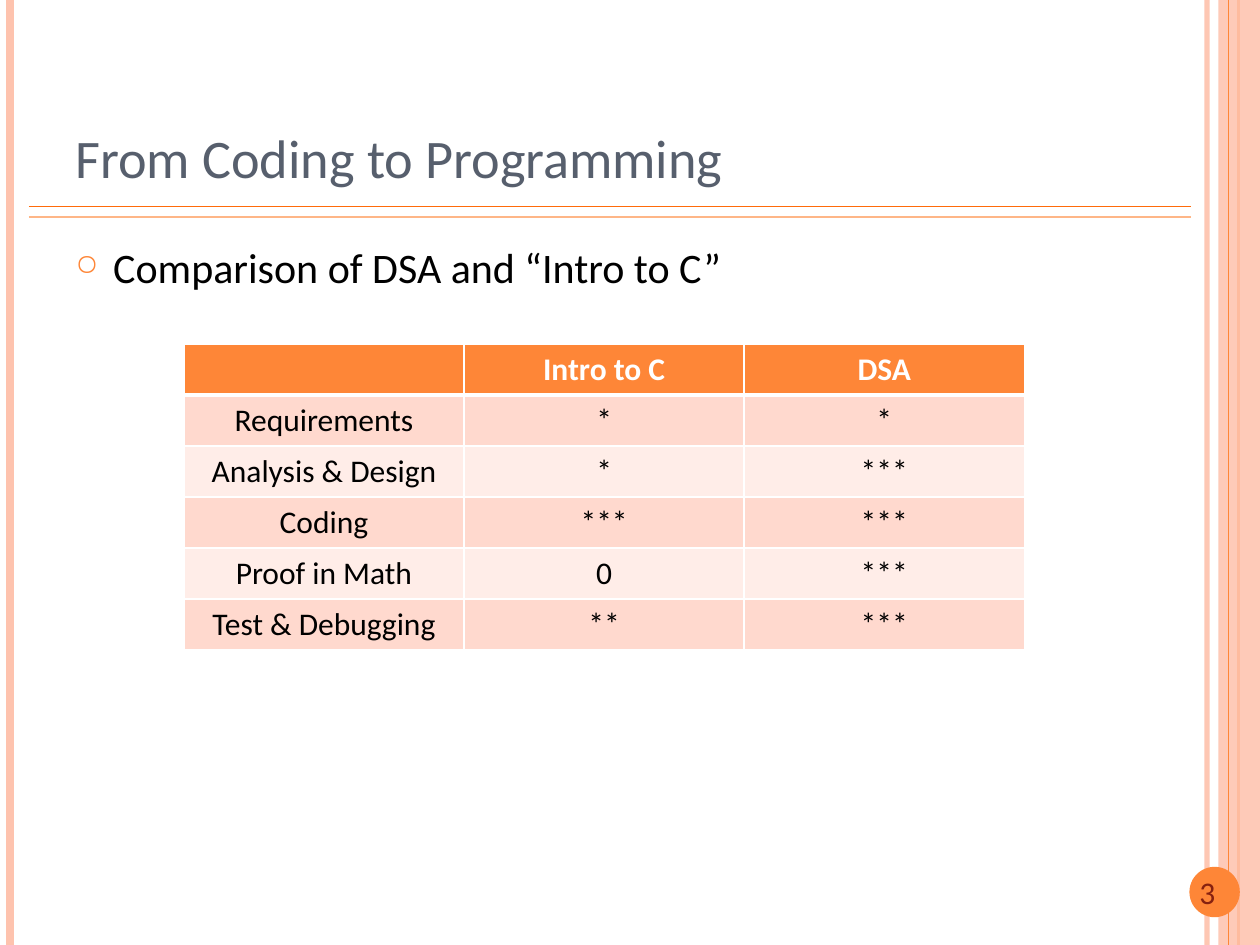
import pptx
import pptx.dml.color
import pptx.enum.shapes
import pptx.enum.text
import pptx.oxml
import pptx.oxml.ns
import pptx.util
from lxml import etree

PX = 9144  # EMU per px, 100 px to the inch
FONT = "Calibri"
COLORS = {
    "orange": "FE8637", "peach": "FEC3AE", "rule": "FF6B0A", "light rule": "FEB687",
    "title": "575F6D", "number": "862110", "text": "000000", "white": "FFFFFF",
    "odd row": "FFD9CE", "even row": "FFEDE8",
}
ROWS = [
    ["", "Intro to C", "DSA"],
    ["Requirements", "*", "*"],
    ["Analysis & Design", "*", "***"],
    ["Coding", "***", "***"],
    ["Proof in Math", "0", "***"],
    ["Test & Debugging", "**", "***"],
]
ANCHOR = pptx.enum.text.MSO_ANCHOR


def rgb(name):
    return pptx.dml.color.RGBColor.from_string(COLORS[name])


def add_element(parent, tag, **attributes):
    return etree.SubElement(parent, pptx.oxml.ns.qn(tag), attributes)


def set_opacity(element, percent):
    color = next(element.iter(pptx.oxml.ns.qn("a:srgbClr")))
    add_element(color, "a:alpha", val=str(percent * 1000))


class SlideBuilder:
    def __init__(self, slide):
        self.slide = slide

    def line(self, start, end, color, width, opacity=100):
        connector = self.slide.shapes.add_connector(
            pptx.enum.shapes.MSO_CONNECTOR.STRAIGHT,
            *(value * PX for value in (*start, *end)))
        connector.line.color.rgb = rgb(color)
        connector.line.width = pptx.util.Pt(width)
        properties = connector._element.spPr
        if opacity < 100:
            set_opacity(properties, opacity)
        add_element(properties, "a:effectLst")

    def shape(self, kind, box, color, opacity=100):
        shape = self.slide.shapes.add_shape(kind, *(value * PX for value in box))
        shape.shadow.inherit = False
        shape.fill.solid()
        shape.fill.fore_color.rgb = rgb(color)
        shape.line.fill.background()
        if opacity < 100:
            set_opacity(shape._element.spPr, opacity)

    def run(self, paragraph, text, size, color, bold=False):
        run = paragraph.add_run()
        run.text = text
        run.font.name = FONT
        run.font.size = pptx.util.Pt(size)
        run.font.bold = bold
        run.font.color.rgb = rgb(color)

    def text(self, box, text, size, color, anchor=ANCHOR.TOP):
        frame = self.slide.shapes.add_textbox(*(value * PX for value in box)).text_frame
        frame.word_wrap = True
        frame.vertical_anchor = anchor
        paragraph = frame.paragraphs[0]
        self.run(paragraph, text, size, color)
        return paragraph

    def bullet(self, paragraph, character, color, percent, indent):
        properties = paragraph._p.get_or_add_pPr()
        properties.set("marL", str(indent * PX))
        properties.set("indent", str(-indent * PX))
        bullet_color = add_element(properties, "a:buClr")
        add_element(bullet_color, "a:srgbClr", val=COLORS[color])
        add_element(properties, "a:buSzPct", val=str(percent * 1000))
        add_element(properties, "a:buChar", char=character)

    def borders(self, cell, widths):
        """Draw white borders; widths are points for left, right, top, bottom."""
        properties = cell._tc.get_or_add_tcPr()
        for index, (side, width) in enumerate(zip("LRTB", widths)):
            border = pptx.oxml.parse_xml(
                f'<a:ln{side} {pptx.oxml.ns.nsdecls("a")} w="{width * 12700}">'
                f'<a:solidFill><a:srgbClr val="{COLORS["white"]}"/></a:solidFill>'
                f'</a:ln{side}>')
            properties.insert(index, border)

    def table(self, box, rows, size):
        table = self.slide.shapes.add_table(
            len(rows), len(rows[0]), *(value * PX for value in box)).table
        for row, texts in enumerate(rows):
            header = row == 0
            fill = "orange" if header else "odd row" if row % 2 else "even row"
            for column, text in enumerate(texts):
                cell = table.cell(row, column)
                cell.fill.solid()
                cell.fill.fore_color.rgb = rgb(fill)
                self.borders(cell, (1, 1, 3 if row == 1 else 1, 3 if header else 1))
                paragraph = cell.text_frame.paragraphs[0]
                paragraph.alignment = pptx.enum.text.PP_ALIGN.CENTER
                if text:
                    self.run(paragraph, text, size, "white" if header else "text", header)
                else:
                    paragraph.font.size = pptx.util.Pt(size)


def main():
    presentation = pptx.Presentation()
    presentation.slide_width = 1000 * PX
    presentation.slide_height = 750 * PX
    builder = SlideBuilder(presentation.slides.add_slide(presentation.slide_layouts[6]))
    shapes = pptx.enum.shapes.MSO_SHAPE

    def stripe(x, color, width, opacity=100):
        builder.line((x, 0), (x, 750), color, width, opacity)

    stripe(958, "peach", 3, 93)
    stripe(8, "peach", 4.5)
    stripe(983, "orange", 1.5)
    builder.shape(shapes.RECTANGLE, (967, 0, 33, 750), "peach", 87)
    stripe(975, "orange", 0.75)
    for y, color in ((164, "rule"), (172, "light rule")):
        builder.line((23, y), (945, y), color, 1)

    builder.shape(shapes.OVAL, (944, 688, 40, 40), "orange")
    builder.text((942, 688, 50, 40), "3", 18, "number", ANCHOR.MIDDLE)
    builder.text((50, 30, 864, 125), "From Coding to Programming", 31, "title", ANCHOR.BOTTOM)
    heading = builder.text((50, 187, 817, 521), "Comparison of DSA and “Intro to C”", 24, "text")
    builder.bullet(heading, "○", "orange", 70, 30)
    builder.table((146, 273, 667, 243), ROWS, 18)

    presentation.save("out.pptx")


if __name__ == "__main__":
    main()
